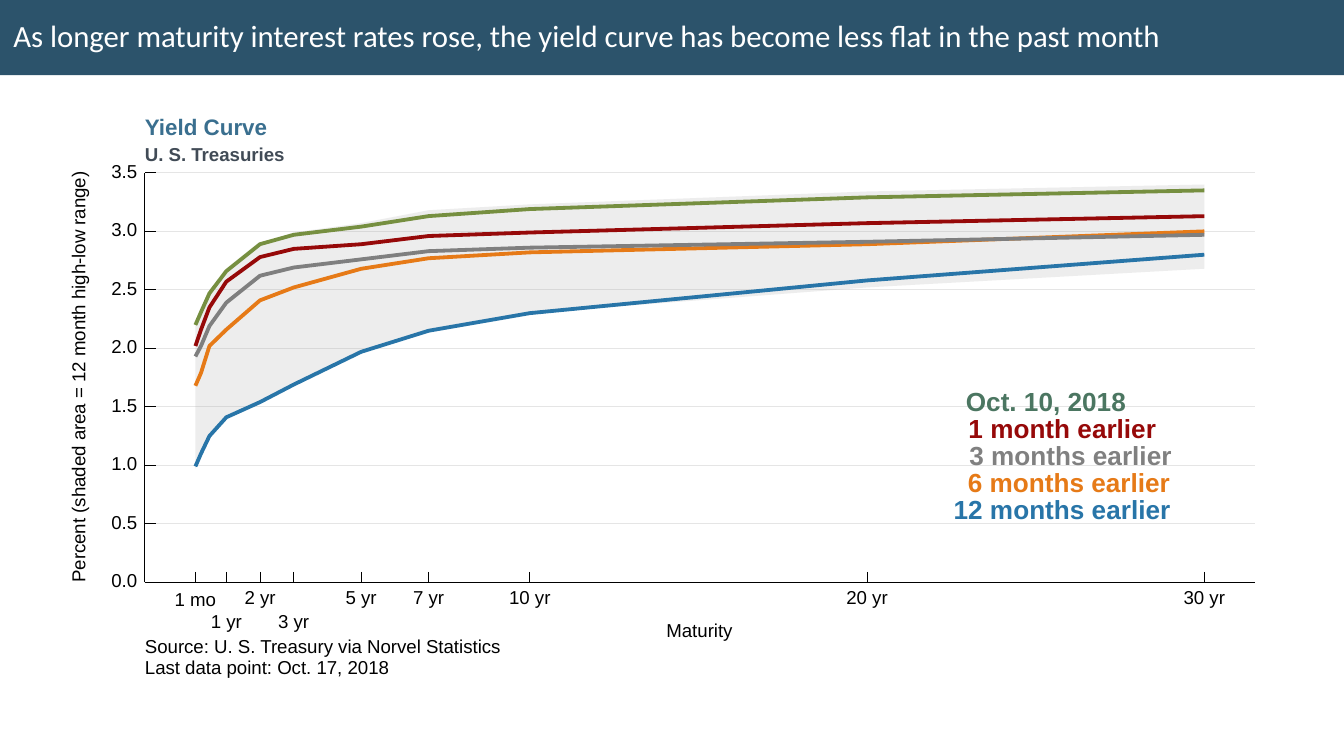
from pptx import Presentation
from pptx.dml.color import RGBColor
from pptx.enum.shapes import MSO_CONNECTOR
from pptx.enum.text import MSO_ANCHOR, MSO_AUTO_SIZE, PP_ALIGN
from pptx.oxml.ns import qn
from pptx.util import Cm, Pt
from lxml import etree

STRAIGHT = MSO_CONNECTOR.STRAIGHT
MIDDLE = MSO_ANCHOR.MIDDLE
FIXED = MSO_AUTO_SIZE.NONE
LEFT, CENTER = PP_ALIGN.LEFT, PP_ALIGN.CENTER

# Plot frame, in cm
AXIS, RIGHT, BASE = 2.74, 23.72, 11.0
ZERO, SPAN = 3.64, 19.12   # maturity 0, and the width of 30 years
UNIT = 2.21                # height of one percent
TICK = 0.2

YEARS = [1 / 12, 0.25, 0.5, 1, 2, 3, 5, 7, 10, 20, 30]
HIGH = [2.2, 2.31, 2.47, 2.67, 2.89, 2.99, 3.07, 3.18, 3.23, 3.34, 3.4]
LOW = [0.97, 1.09, 1.25, 1.41, 1.54, 1.69, 1.97, 2.15, 2.3, 2.52, 2.68]
CURVES = [
    ("2875A8", [0.99, 1.1, 1.25, 1.41, 1.54, 1.69, 1.97, 2.15, 2.3, 2.58, 2.8]),
    ("E67A17", [1.68, 1.79, 2.02, 2.16, 2.41, 2.52, 2.68, 2.77, 2.82, 2.89, 3.0]),
    ("7F7F7F", [1.93, 2.02, 2.19, 2.39, 2.62, 2.69, 2.76, 2.83, 2.86, 2.91, 2.97]),
    ("960909", [2.02, 2.16, 2.35, 2.57, 2.78, 2.85, 2.89, 2.96, 2.99, 3.07, 3.13]),
    ("768F40", [2.2, 2.31, 2.47, 2.66, 2.89, 2.97, 3.04, 3.13, 3.19, 3.29, 3.35]),
]
# Text, maturity in years, width, middle height
MARKS = [
    ("1 mo", 1 / 12, 0.79, 11.36),
    ("1 yr", 1, 0.58, 11.77),
    ("2 yr", 2, 0.58, 11.32),
    ("3 yr", 3, 0.58, 11.77),
    ("5 yr", 5, 0.58, 11.32),
    ("7 yr", 7, 0.58, 11.32),
    ("10 yr", 10, 0.79, 11.32),
    ("20 yr", 20, 0.79, 11.32),
    ("30 yr", 30, 0.79, 11.32),
]
# Text, colour, left, width
KEYS = [
    ("Oct. 10, 2018", "4B7661", 18.26, 3.02),
    ("1 month earlier", "960909", 18.34, 3.48),
    ("3 months earlier", "808080", 18.29, 3.89),
    ("6 months earlier", "E67A17", 18.95, 2.51),
    ("12 months earlier", "2875A8", 18.82, 2.51),
]


def color(code):
    return RGBColor.from_string(code)


def place(year, rate):
    """Point on the slide, in cm, of a rate at a maturity."""
    return ZERO + SPAN * year / 30, BASE - UNIT * rate


def write(frame, text, size=10, font="Arial", ink="000000", bold=False,
          align=CENTER, space=None):
    frame.vertical_anchor = MIDDLE
    frame.auto_size = FIXED
    para = frame.paragraphs[0]
    para.alignment = align
    para.line_spacing = space or Pt(size)
    run = para.add_run()
    run.text = text
    run.font.size = Pt(size)
    run.font.name = font
    run.font.bold = bold
    run.font.color.rgb = color(ink)


class Page:
    thin, thick = Pt(0.53), Pt(2.03)

    def __init__(self, slide):
        self.slide = slide
        self.shapes = slide.shapes

    def title(self, text, width, height):
        head = self.shapes.title
        head.left, head.top = Cm(0), Cm(0)
        head.width, head.height = Cm(width), Cm(height)
        head.fill.solid()
        head.fill.fore_color.rgb = color("2C536B")
        write(head.text_frame, text, size=16.5, font="Calibri", ink="FFFFFF",
              align=LEFT, space=0.9)

    def label(self, text, left, mid, width, turn=0, **style):
        """One unwrapped line of text, centred on the height mid."""
        high = 0.3
        box = self.shapes.add_textbox(Cm(left), Cm(mid - high / 2),
                                      Cm(width), Cm(high))
        box.rotation = turn
        frame = box.text_frame
        frame.word_wrap = False
        frame.margin_left = frame.margin_right = 0
        frame.margin_top = frame.margin_bottom = 0
        write(frame, text, **style)

    def rule(self, x1, y1, x2, y2, ink="000000"):
        line = self.shapes.add_connector(STRAIGHT, Cm(x1), Cm(y1), Cm(x2), Cm(y2))
        line.line.width = self.thin
        line.line.color.rgb = color(ink)
        etree.SubElement(line._element.spPr, qn("a:effectLst"))

    def trace(self, points, close=False):
        dots = [(Cm(x), Cm(y)) for x, y in points]
        pen = self.shapes.build_freeform(*dots[0])
        pen.add_line_segments(dots[1:], close=close)
        shape = pen.convert_to_shape()
        shape.shadow.inherit = False
        return shape

    def curve(self, points, ink):
        shape = self.trace(points)
        shape.fill.background()
        shape.line.width = self.thick
        shape.line.color.rgb = color(ink)

    def band(self, points, ink, alpha):
        """Closed area without outline; alpha is opacity in percent."""
        shape = self.trace(points, close=True)
        shape.line.fill.background()
        shape.fill.solid()
        shape.fill.fore_color.rgb = color(ink)
        tone = shape._element.spPr.find(".//" + qn("a:srgbClr"))
        etree.SubElement(tone, qn("a:alpha"), val=str(alpha * 1000))


def main():
    deck = Presentation()
    deck.slide_width, deck.slide_height = Cm(25.4), Cm(14.28)
    page = Page(deck.slides.add_slide(deck.slide_layouts[5]))
    page.title("As longer maturity interest rates rose, the yield curve has "
               "become less flat in the past month", 25.4, 1.42)

    rates = [step / 2 for step in range(8)]
    for rate in rates:
        y = place(0, rate)[1]
        page.rule(AXIS, y, RIGHT, y, "E5E5E5")

    top = list(map(place, YEARS, HIGH))
    low = list(map(place, YEARS, LOW))
    page.band(top + low[::-1], "A6A6A6", 20)
    for ink, data in CURVES:
        page.curve(list(map(place, YEARS, data)), ink)

    page.rule(AXIS, BASE, AXIS, place(0, rates[-1])[1])
    page.rule(AXIS, BASE, RIGHT, BASE)
    for rate in rates:
        y = place(0, rate)[1]
        page.rule(AXIS, y, AXIS + TICK, y)
        page.label(f"{rate:.1f}", 2.11, y, 0.48)
    for text, year, width, mid in MARKS:
        x = place(year, 0)[0]
        page.rule(x, BASE - TICK, x, BASE)
        page.label(text, x - width / 2, mid, width)

    page.label("Maturity", 12.6, 11.93, 1.24)
    page.label("Percent (shaded area = 12 month high-low range)",
               -2.39, 7.12, 7.8, turn=270)
    page.label("Yield Curve", AXIS, 2.44, 2.34, size=12, ink="3A6F8F",
               bold=True, align=LEFT)
    page.label("U. S. Treasuries", AXIS, 2.95, 2.67, ink="414B56",
               bold=True, align=LEFT)
    page.label("Source: U. S. Treasury via Norvel Statistics",
               AXIS, 12.23, 6.68, align=LEFT)
    page.label("Last data point: Oct. 17, 2018", AXIS, 12.64, 4.62, align=LEFT)

    for row, (text, ink, left, width) in enumerate(KEYS):
        page.label(text, left, 7.62 + 0.51 * row, width, size=14, ink=ink,
                   bold=True)

    deck.save("out.pptx")


if __name__ == "__main__":
    main()
